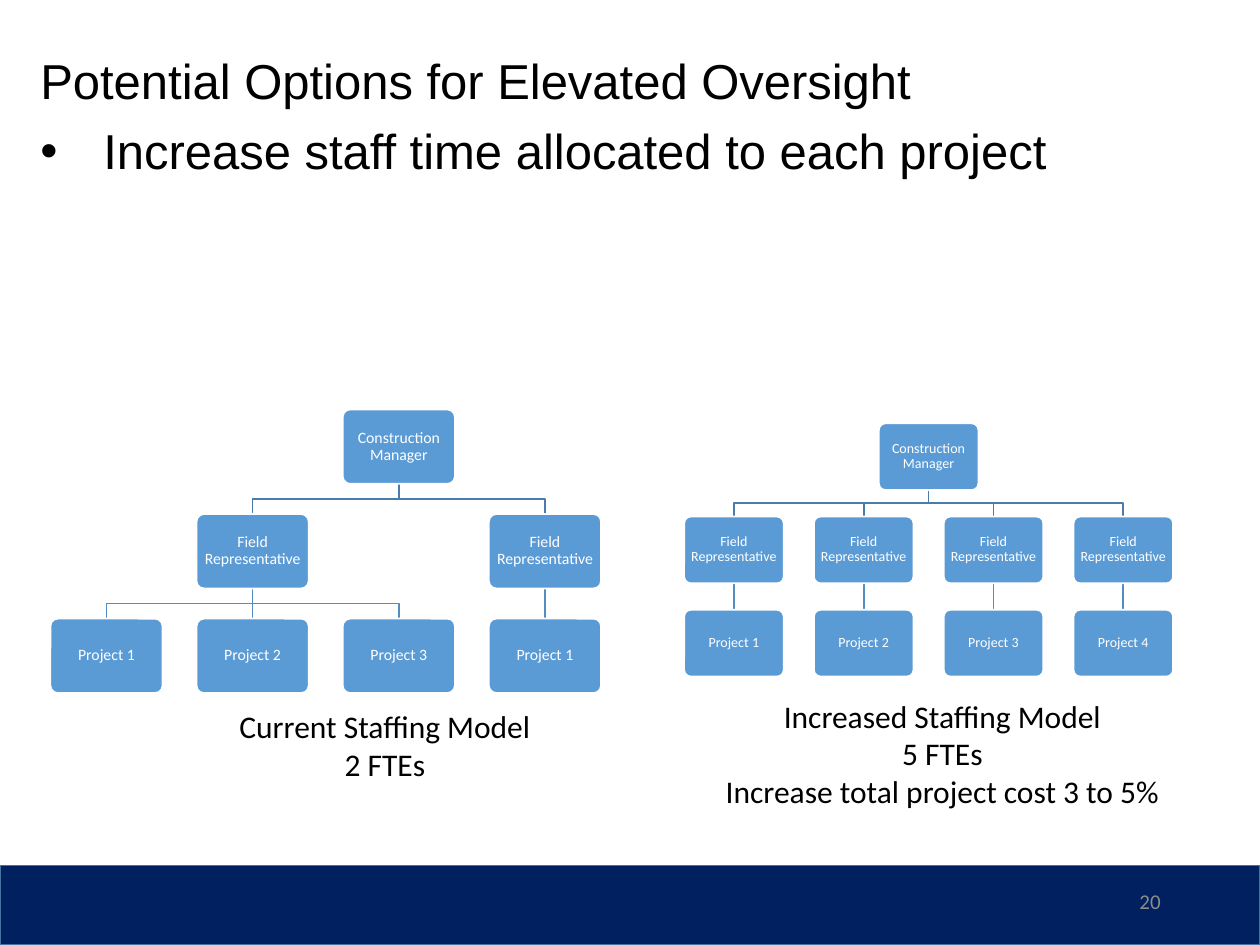
"""Build the slide comparing the current and increased staffing models."""
from dataclasses import dataclass

from lxml.etree import SubElement
from pptx import Presentation
from pptx.dml.color import RGBColor as Rgb
from pptx.enum.shapes import MSO_CONNECTOR as Link, MSO_SHAPE as Preset
from pptx.enum.text import MSO_ANCHOR as Anchor, MSO_AUTO_SIZE as Fit, PP_ALIGN as Align
from pptx.oxml.ns import qn
from pptx.util import Inches, Pt


@dataclass(frozen=True)
class Theme:
    """Hold the colours, fonts and type sizes."""
    heading_font: str = "Arial"
    label_font: str = "Calibri"
    heading_size: int = 28
    caption_size: int = 18
    number_size: int = 12
    ink: str = "000000"
    white: str = "FFFFFF"
    grey: str = "8C8C8C"
    navy: str = "002060"
    navy_edge: str = "43739E"
    node: str = "5B9BD5"
    upper_link: str = "497CAB"
    lower_link: str = "538DC1"


THEME = Theme()
HEADING = "Potential Options for Elevated Oversight"
BULLET = "Increase staff time allocated to each project"
PAGE_NUMBER = "20"
MANAGER, REPRESENTATIVE = "Construction Manager", "Field Representative"
CHARTS = [
    {
        "teams": [["Project 1", "Project 2", "Project 3"], ["Project 1"]],
        "left": 0.4, "top": 3.25, "node": (0.89, 0.59), "pitch": (1.16, 0.83), "size": 9,
        "caption": ["Current Staffing Model", "2 FTEs"],
        "caption_area": (1.46, 5.56, 3.19, 0.71),
    },
    {
        "teams": [["Project 1"], ["Project 2"], ["Project 3"], ["Project 4"]],
        "left": 5.43, "top": 3.36, "node": (0.79, 0.53), "pitch": (1.03, 0.74), "size": 8,
        "caption": ["Increased Staffing Model", "5 FTEs", "Increase total project cost 3 to 5%"],
        "caption_area": (5.5, 5.48, 3.96, 1.01),
    },
]


def inches(*values):
    return [Inches(value) for value in values]


def add_run(para, text, font, size, color):
    span = para.add_run()
    span.text = text
    span.font.name = font
    span.font.size = Pt(size)
    span.font.color.rgb = Rgb.from_string(color)


def write_lines(frame, lines, size, color, align):
    frame.word_wrap = True
    for index, line in enumerate(lines):
        para = frame.add_paragraph() if index else frame.paragraphs[0]
        para.alignment = align
        add_run(para, line, THEME.label_font, size, color)


def add_text(page, area, lines, size, color, align):
    box = page.shapes.add_textbox(*inches(*area))
    write_lines(box.text_frame, lines, size, color, align)
    return box


def add_block(page, preset, area, fill, edge):
    block = page.shapes.add_shape(preset, *inches(*area))
    block.shadow.inherit = False
    block.fill.solid()
    block.fill.fore_color.rgb = Rgb.from_string(fill)
    block.line.color.rgb = Rgb.from_string(edge)
    block.line.width = Pt(1)
    return block


def add_node(page, center, top, chart, text):
    width, height = chart["node"]
    node = add_block(page, Preset.ROUNDED_RECTANGLE, (center - width / 2, top, width, height),
                     THEME.node, THEME.white)
    node.adjustments[0] = 0.1
    frame = node.text_frame
    frame.vertical_anchor = Anchor.MIDDLE
    frame.margin_left = frame.margin_right = Inches(0.03)
    frame.margin_top = frame.margin_bottom = Inches(0.03)
    write_lines(frame, [text], chart["size"], THEME.white, Align.CENTER)
    frame.paragraphs[0].line_spacing = 0.9


def add_link(page, start, end, color):
    (x1, y1), (x2, y2) = start, end
    if abs(x1 - x2) < 0.01:
        link = page.shapes.add_connector(Link.STRAIGHT, *inches(x1, y1, x2, y2))
        SubElement(link._element.spPr, qn("a:effectLst"))
    else:
        middle = (y1 + y2) / 2
        builder = page.shapes.build_freeform(*inches(x1, y1))
        corners = [(x1, middle), (x2, middle), (x2, y2)]
        builder.add_line_segments([inches(*corner) for corner in corners], close=False)
        link = builder.convert_to_shape()
        link.fill.background()
        link.shadow.inherit = False
    link.line.color.rgb = Rgb.from_string(color)
    link.line.width = Pt(1)


def add_chart_tree(page, chart):
    width, height = chart["node"]
    column, row = chart["pitch"]
    manager_top, team_top, project_top = [chart["top"] + level * row for level in range(3)]
    nodes, team_centers, used = [], [], 0
    for projects in chart["teams"]:
        centers = [chart["left"] + width / 2 + (used + place) * column
                   for place in range(len(projects))]
        used += len(projects)
        team = (centers[0] + centers[-1]) / 2
        team_centers.append(team)
        nodes.append((team, team_top, REPRESENTATIVE))
        for center, project in zip(centers, projects):
            nodes.append((center, project_top, project))
            add_link(page, (team, team_top + height), (center, project_top), THEME.lower_link)
    manager = (team_centers[0] + team_centers[-1]) / 2
    for team in team_centers:
        add_link(page, (manager, manager_top + height), (team, team_top), THEME.upper_link)
    for center, top, text in [(manager, manager_top, MANAGER), *nodes]:
        add_node(page, center, top, chart, text)


def fill_body(body):
    body.left, body.top, body.width, body.height = inches(0.22, 0.4, 9.46, 6.36)
    frame = body.text_frame
    frame.auto_size = Fit.NONE
    for text, bullet, indent in [(HEADING, None, 0), (BULLET, "•", 0.5)]:
        para = frame.add_paragraph() if bullet else frame.paragraphs[0]
        props = para._p.get_or_add_pPr()
        props.set("marL", str(Inches(indent)))
        props.set("indent", str(-Inches(indent)))
        if bullet:
            SubElement(props, qn("a:buFont"), typeface=THEME.heading_font)
            SubElement(props, qn("a:buChar"), char=bullet)
        else:
            SubElement(props, qn("a:buNone"))
        para.line_spacing = 0.9
        para.space_before = Pt(10 if bullet else 0)
        add_run(para, text, THEME.heading_font, THEME.heading_size, THEME.ink)


def main():
    deck = Presentation()
    deck.slide_width, deck.slide_height = inches(10, 7.5)
    page = deck.slides.add_slide(deck.slide_layouts[1])
    title = page.shapes.title._element
    title.getparent().remove(title)
    fill_body(page.placeholders[1])
    add_block(page, Preset.RECTANGLE, (0, 6.87, 10, 0.63), THEME.navy, THEME.navy_edge)
    number = add_text(page, (7.06, 6.95, 2.25, 0.4), [PAGE_NUMBER],
                      THEME.number_size, THEME.grey, Align.RIGHT)
    number.text_frame.vertical_anchor = Anchor.MIDDLE
    for chart in CHARTS:
        add_chart_tree(page, chart)
        add_text(page, chart["caption_area"], chart["caption"],
                 THEME.caption_size, THEME.ink, Align.CENTER)
    deck.save("out.pptx")


if __name__ == "__main__":
    main()
